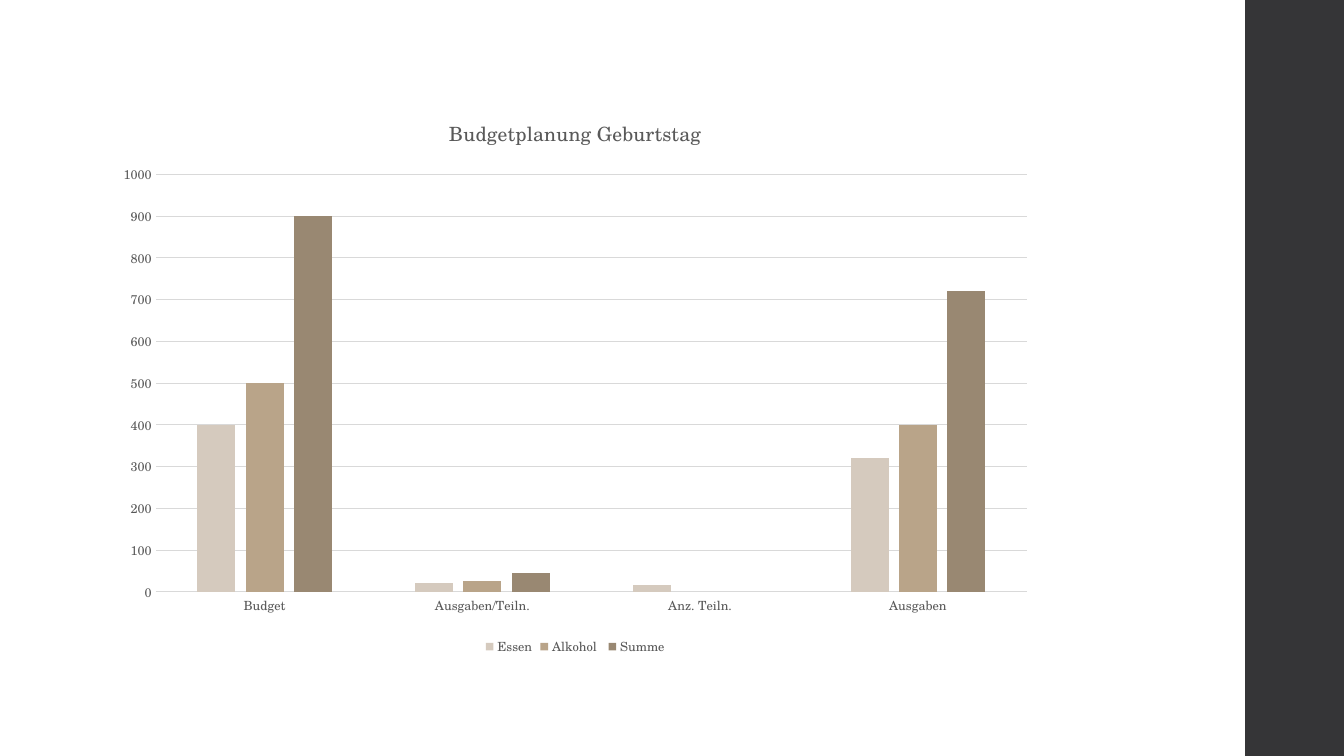
"""Build the birthday budget slide with its column chart."""
from dataclasses import dataclass
from typing import Optional

from pptx import Presentation
from pptx.chart.chart import Chart
from pptx.chart.data import CategoryChartData
from pptx.dml.color import RGBColor
from pptx.dml.line import LineFormat
from pptx.enum.chart import XL_CHART_TYPE, XL_LEGEND_POSITION, XL_TICK_MARK
from pptx.enum.shapes import MSO_SHAPE
from pptx.slide import Slide
from pptx.text.text import Font
from pptx.util import Inches, Pt


@dataclass(frozen=True)
class Theme:
    face: str = "TeX Gyre Schola"
    text: str = "595959"
    grid: str = "D9D9D9"
    band: str = "353537"
    title: float = 14
    label: float = 9
    rule: float = 0.75


@dataclass(frozen=True)
class Series:
    name: str
    color: str
    values: tuple[Optional[float], ...]


THEME = Theme()
GROUPS = ("Budget", "Ausgaben/Teiln.", "Anz. Teiln.", "Ausgaben")
SERIES = (
    Series("Essen", "D5CABE", (400, 20, 16, 320)),
    Series("Alkohol ", "B9A489", (500, 25, None, 400)),
    Series("Summe", "998872", (900, 45, None, 720)),
)


def set_font(font: Font, size: float) -> None:
    font.name = THEME.face
    font.size = Pt(size)
    font.bold = False
    font.color.rgb = RGBColor.from_string(THEME.text)


def set_line(line: LineFormat) -> None:
    line.color.rgb = RGBColor.from_string(THEME.grid)
    line.width = Pt(THEME.rule)


def add_band(slide: Slide) -> None:
    band = slide.shapes.add_shape(
        MSO_SHAPE.RECTANGLE, Inches(12.35), 0, Inches(0.98), Inches(7.5))
    band.shadow.inherit = False
    band.fill.solid()
    band.fill.fore_color.rgb = RGBColor.from_string(THEME.band)
    band.line.fill.background()


def add_chart(slide: Slide) -> Chart:
    data = CategoryChartData()
    data.categories = GROUPS
    for item in SERIES:
        data.add_series(item.name, item.values)
    frame = slide.shapes.add_chart(
        XL_CHART_TYPE.COLUMN_CLUSTERED,
        Inches(1.04), Inches(0.95), Inches(9.33), Inches(5.6), data)
    return frame.chart


def style_axes(chart: Chart) -> None:
    for axis in (chart.category_axis, chart.value_axis):
        axis.major_tick_mark = XL_TICK_MARK.NONE
        axis.minor_tick_mark = XL_TICK_MARK.NONE
        set_font(axis.tick_labels.font, THEME.label)
    set_line(chart.category_axis.format.line)
    scale = chart.value_axis
    scale.minimum_scale, scale.maximum_scale = 0, 1000
    scale.major_unit = 100
    scale.format.line.fill.background()
    set_line(scale.major_gridlines.format.line)


def style_chart(chart: Chart) -> None:
    set_font(chart.font, THEME.label)
    chart.has_title = True
    frame = chart.chart_title.text_frame
    frame.text = "Budgetplanung Geburtstag"
    set_font(frame.paragraphs[0].font, THEME.title)
    chart.chart_title.include_in_layout = False
    chart.has_legend = True
    chart.legend.position = XL_LEGEND_POSITION.BOTTOM
    chart.legend.include_in_layout = False
    set_font(chart.legend.font, THEME.label)
    plot = chart.plots[0]
    plot.gap_width, plot.overlap = 219, -27
    plot.vary_by_categories = False
    for bars, item in zip(plot.series, SERIES):
        bars.invert_if_negative = False
        bars.format.fill.solid()
        bars.format.fill.fore_color.rgb = RGBColor.from_string(item.color)


def main() -> None:
    deck = Presentation()
    deck.slide_width, deck.slide_height = Inches(13.33), Inches(7.5)
    slide = deck.slides.add_slide(deck.slide_layouts[6])
    add_band(slide)
    chart = add_chart(slide)
    style_chart(chart)
    style_axes(chart)
    deck.save("out.pptx")


if __name__ == "__main__":
    main()
